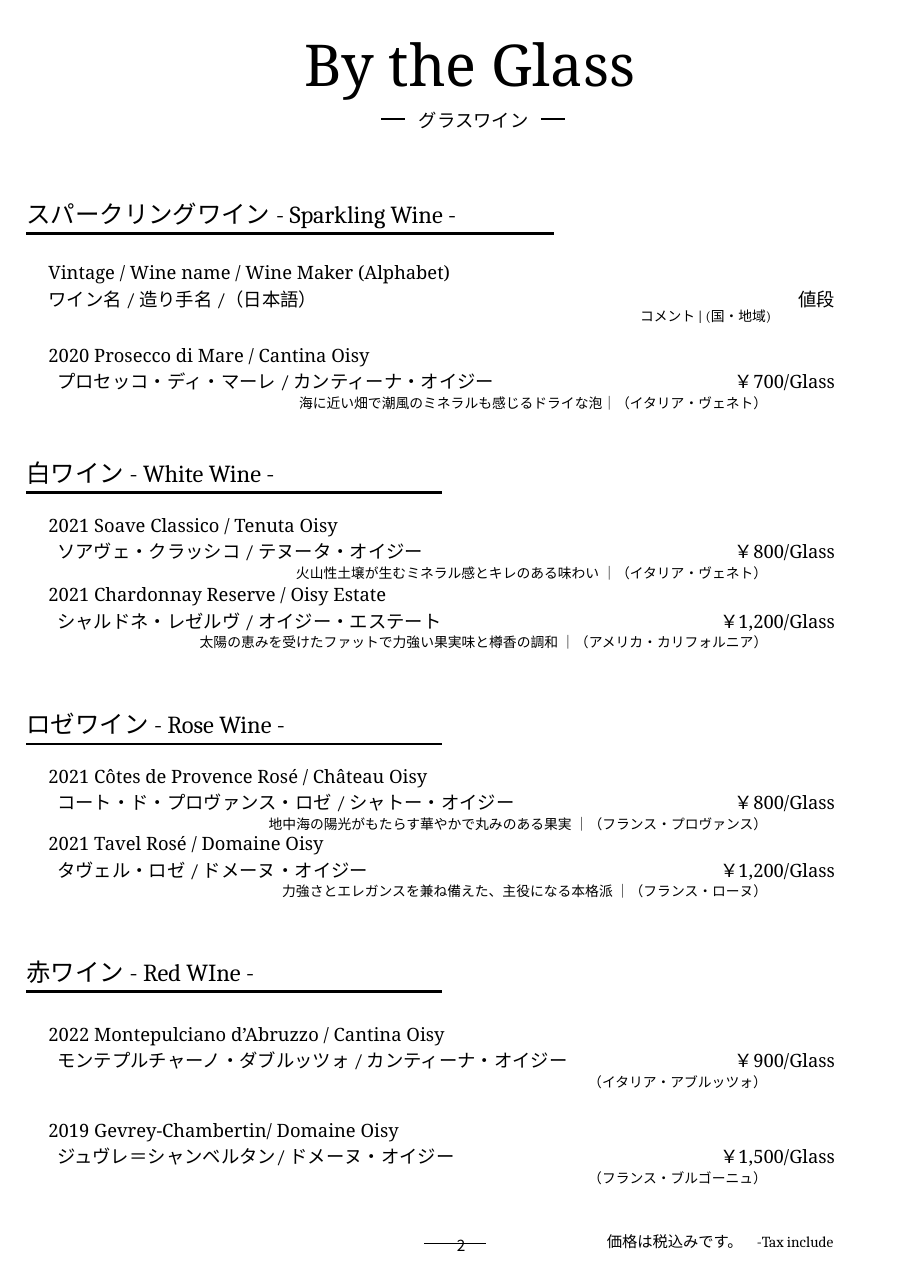
import pptx
import pptx.dml.color
import pptx.enum.shapes
import pptx.enum.text
import pptx.util
import lxml.etree
import dataclasses
from pptx.oxml.ns import qn
from pptx.util import Inches

# Content: heading, top, rule width, rule weight, wines
# Wine: top, name, Japanese name, price, comment
MENU = [
    ("スパークリングワイン - Sparkling Wine -", 1.76, 4.79, 2, [
        (3.09, "2020 Prosecco di Mare / Cantina Oisy",
         "プロセッコ・ディ・マーレ / カンティーナ・オイジー", "￥700/Glass",
         "海に近い畑で潮風のミネラルも感じるドライな泡｜（イタリア・ヴェネト）"),
    ]),
    ("白ワイン - White Wine -", 4.11, 3.77, 1.5, [
        (4.63, "2021 Soave Classico / Tenuta Oisy",
         "ソアヴェ・クラッシコ / テヌータ・オイジー", "￥800/Glass",
         "火山性土壌が生むミネラル感とキレのある味わい ｜（イタリア・ヴェネト）"),
        (5.26, "2021 Chardonnay Reserve / Oisy Estate",
         "シャルドネ・レゼルヴ / オイジー・エステート", "￥1,200/Glass",
         "太陽の恵みを受けたファットで力強い果実味と樽香の調和 ｜（アメリカ・カリフォルニア）"),
    ]),
    ("ロゼワイン - Rose Wine -", 6.39, 3.77, 1.5, [
        (6.91, "2021 Côtes de Provence Rosé / Château Oisy",
         "コート・ド・プロヴァンス・ロゼ / シャトー・オイジー", "￥800/Glass",
         "地中海の陽光がもたらす華やかで丸みのある果実 ｜（フランス・プロヴァンス）"),
        (7.52, "2021 Tavel Rosé / Domaine Oisy",
         "タヴェル・ロゼ / ドメーヌ・オイジー", "￥1,200/Glass",
         "力強さとエレガンスを兼ね備えた、主役になる本格派 ｜（フランス・ローヌ）"),
    ]),
    ("赤ワイン - Red WIne -", 8.64, 3.77, 1.5, [
        (9.25, "2022 Montepulciano d’Abruzzo / Cantina Oisy",
         "モンテプルチャーノ・ダブルッツォ / カンティーナ・オイジー", "￥900/Glass",
         "（イタリア・アブルッツォ）"),
        (10.12, "2019 Gevrey-Chambertin/ Domaine Oisy",
         "ジュヴレ＝シャンベルタン/ ドメーヌ・オイジー", "￥1,500/Glass",
         "（フランス・ブルゴーニュ）"),
    ]),
]
GUIDE = (2.34, "Vintage / Wine name / Wine Maker (Alphabet)",
         "ワイン名 / 造り手名 /（日本語）", "値段", "コメント | (国・地域)")
TITLE, KANA, PAGE = "By the Glass", "グラスワイン", "2"
TAX = ["価格は税込みです。", "\t-Tax include"]


@dataclasses.dataclass(frozen=True)
class Theme:
    ink: str = "000000"
    serif: str = "Noto Serif"
    mixed: str = "Cambria"
    sans: str = "Noto Sans CJK SC"
    title: float = 37.7
    head: int = 16
    body: int = 12
    foot: int = 10
    note: int = 9


THEME = Theme()
INK = pptx.dml.color.RGBColor.from_string(THEME.ink)
ALIGN = pptx.enum.text.PP_ALIGN
HEAD_X, NAME_X, EDGE = 0.24, 0.44, 7.58


def fill(box, runs, size, face, align, lead=1.4):
    """Set the runs in one paragraph; lead is line height over type size."""
    frame = box.text_frame
    frame.word_wrap = True
    frame.auto_size = pptx.enum.text.MSO_AUTO_SIZE.NONE
    frame.vertical_anchor = pptx.enum.text.MSO_ANCHOR.TOP
    frame.margin_left = frame.margin_right = 0
    frame.margin_top = frame.margin_bottom = 0
    para = frame.paragraphs[0]
    para.alignment = align
    para.line_spacing = pptx.util.Pt(round(size * lead, 1))
    for text in runs:
        run = para.add_run()
        run.text = text
        run.font.size = pptx.util.Pt(size)
        run.font.name = face
        run.font.color.rgb = INK
        east = lxml.etree.SubElement(run._r.get_or_add_rPr(), qn("a:ea"))
        east.set("typeface", THEME.sans)
    return para


def write(slide, text, x, y, w, size, face=THEME.mixed, align=ALIGN.LEFT):
    runs = [text] if isinstance(text, str) else text
    box = slide.shapes.add_textbox(
        Inches(x), Inches(y), Inches(w), Inches(round(size * 0.018, 2)))
    return fill(box, runs, size, face, align)


def rule(slide, x, y, w, weight):
    line = slide.shapes.add_connector(
        pptx.enum.shapes.MSO_CONNECTOR.STRAIGHT,
        Inches(x), Inches(y), Inches(x + w), Inches(y))
    line.line.color.rgb = INK
    line.line.width = pptx.util.Pt(weight)
    lxml.etree.SubElement(line._element.spPr, qn("a:effectLst"))


def wine(slide, entry, inset=0.08, drop=0.47, end=6.96):
    """Add one wine; inset shifts the Japanese name, end is the comment's right edge."""
    top, name, local, price, note = entry
    write(slide, name, NAME_X, top, 5.78, THEME.body, THEME.serif)
    write(slide, local, NAME_X + inset, top + 0.24, 5.9, THEME.body)
    write(slide, price, EDGE - 1.15, top + 0.24, 1.15, THEME.body,
          THEME.serif, ALIGN.RIGHT)
    write(slide, note, end - 6.36, top + drop, 6.36, THEME.note,
          align=ALIGN.RIGHT)


def head(slide):
    title = slide.shapes.title
    title.left, title.top = Inches(2.41), Inches(0.16)
    title.width, title.height = Inches(3.71), Inches(0.7)
    fill(title, [TITLE], THEME.title, THEME.serif, ALIGN.CENTER, 1.4)
    for x in (3.46, 4.91):
        rule(slide, x, 1.08, 0.22, 1)
    write(slide, KANA, 3.75, 0.96, 1.1, THEME.body, align=ALIGN.CENTER)


def foot(slide):
    rule(slide, 3.85, 11.29, 0.56, 0.75)
    write(slide, PAGE, 4.1, 11.19, 0.17, THEME.foot, THEME.sans, ALIGN.CENTER)
    para = write(slide, TAX, 5.51, 11.16, 2.4, THEME.foot)
    tabs = lxml.etree.SubElement(para._p.get_or_add_pPr(), qn("a:tabLst"))
    lxml.etree.SubElement(tabs, qn("a:tab"), pos=str(Inches(1.36)), algn="l")


def main():
    deck = pptx.Presentation()
    deck.slide_width, deck.slide_height = Inches(8.26), Inches(11.69)
    slide = deck.slides.add_slide(deck.slide_layouts.get_by_name("Title Only"))
    head(slide)
    wine(slide, GUIDE, inset=0, drop=0.43, end=7)
    for label, top, width, weight, wines in MENU:
        write(slide, label, HEAD_X, top, 5.38, THEME.head)
        rule(slide, HEAD_X, top + 0.36, width, weight)
        for entry in wines:
            wine(slide, entry)
    foot(slide)
    deck.save("out.pptx")


if __name__ == "__main__":
    main()
